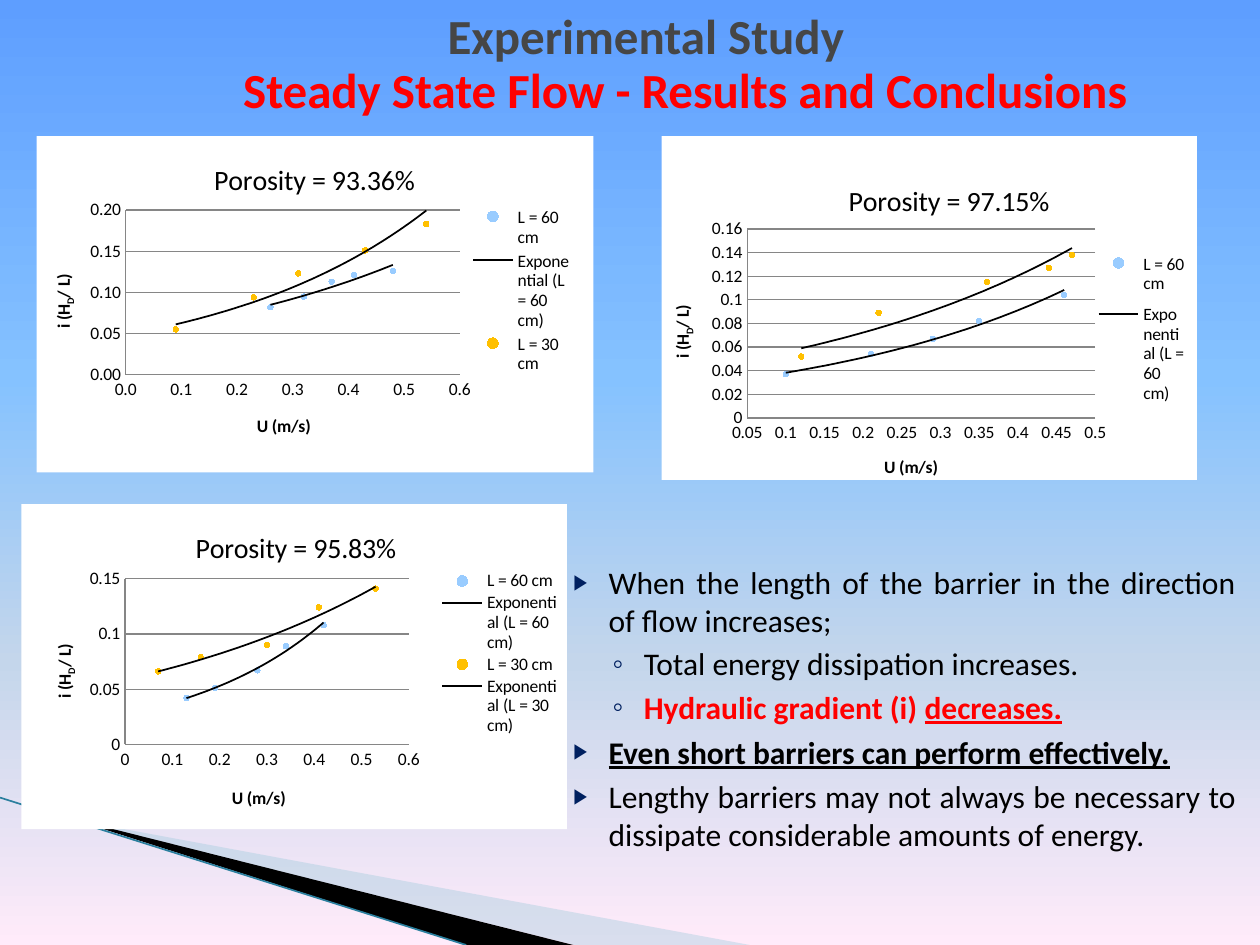
"""Build the slide on steady state flow results and conclusions."""
from dataclasses import dataclass

from pptx import Presentation
from pptx.chart.data import XyChartData
from pptx.dml.color import RGBColor
from pptx.enum.chart import XL_CHART_TYPE as Kind, XL_LEGEND_POSITION as Side
from pptx.enum.chart import XL_MARKER_STYLE as Mark, XL_TICK_MARK as Tick
from pptx.enum.shapes import MSO_CONNECTOR as Conn
from pptx.enum.text import MSO_ANCHOR as Anchor, MSO_AUTO_SIZE as Fit, PP_ALIGN as Align
from pptx.oxml import parse_xml
from pptx.oxml.ns import nsdecls, qn
from pptx.util import Inches, Pt


@dataclass(frozen=True)
class Theme:
    font: str = "Calibri"
    head: int = 28
    body: int = 18
    name: int = 16
    small: int = 10
    black: str = "000000"
    white: str = "FFFFFF"
    red: str = "FF0000"
    gray: str = "464646"
    navy: str = "002060"
    grid: str = "868686"
    band: str = "A0CBDC"
    edge: str = "2A7F9E"
    dots: tuple = ("99CCFF", "FFC000")
    sky: tuple = ((0, "5E9EFF"), (40, "85C2FF"), (70, "C4D6EB"), (100, "FFEBFA"))


T = Theme()

CHARTS = [
    dict(title="Porosity = 93.36%", at=(0.29, 1.08, 4.42, 2.67),
         x=(0, 0.6, 0.1), y=(0, 0.2, 0.05), form=("0.0", "0.00"),
         long=[(0.26, 0.082), (0.32, 0.095), (0.37, 0.113), (0.41, 0.121), (0.48, 0.126)],
         short=[(0.09, 0.055), (0.23, 0.094), (0.31, 0.123), (0.43, 0.151), (0.54, 0.183)],
         plot=(0.16, 0.22, 0.6, 0.49), key=(0.78, 0.2, 0.18, 0.52),
         spots=((0.31, 0.06), (0.39, 0.82), (0.02, 0.4))),
    dict(title="Porosity = 95.83%", at=(0.17, 4, 4.33, 2.58),
         x=(0, 0.6, 0.1), y=(0, 0.15, 0.05), form=("General", "General"),
         long=[(0.13, 0.042), (0.19, 0.051), (0.28, 0.067), (0.34, 0.089), (0.42, 0.108)],
         short=[(0.07, 0.066), (0.16, 0.079), (0.3, 0.09), (0.41, 0.124), (0.53, 0.141)],
         plot=(0.19, 0.23, 0.52, 0.51), key=(0.77, 0.2, 0.22, 0.52),
         spots=((0.31, 0.06), (0.38, 0.86), (0.05, 0.42))),
    dict(title="Porosity = 97.15%", at=(5.25, 1.08, 4.25, 2.75),
         x=(0.05, 0.5, 0.05), y=(0, 0.16, 0.02), form=("General", "General"),
         long=[(0.1, 0.037), (0.21, 0.054), (0.29, 0.067), (0.35, 0.082), (0.46, 0.104)],
         short=[(0.12, 0.052), (0.22, 0.089), (0.36, 0.115), (0.44, 0.127), (0.47, 0.138)],
         plot=(0.16, 0.27, 0.65, 0.55), key=(0.82, 0.31, 0.16, 0.5),
         spots=((0.34, 0.12), (0.41, 0.92), (0.01, 0.48))),
]

POINTS = [
    (0, [("When the length of the barrier in the direction of flow increases;", {})]),
    (1, [("Total energy dissipation increases.", {})]),
    (1, [("Hydraulic gradient (i) ", dict(color=T.red, bold=True)),
         ("decreases.", dict(color=T.red, bold=True, under=True))]),
    (0, [("Even short barriers can perform effectively.", dict(bold=True, under=True))]),
    (0, [("Lengthy barriers may not always be necessary to dissipate "
          "considerable amounts of energy.", {})]),
]
LEVELS = [dict(left=0.4, hang=-0.28, gap=4, char="▶", size=68),
          dict(left=0.68, hang=-0.25, gap=3.2, char="◦", size=100)]

BANDS = [([(0.55, 6.5), (5.95, 7.5), (4.56, 7.5)], T.band, 40),
         ([(0.54, 6.49), (4.55, 7.5), (3.7, 7.5)], T.black, 100)]


def rgb(code):
    return RGBColor.from_string(code)


def put(para, text, size=T.body, color=T.black, bold=False, under=False, base=0):
    run = para.add_run()
    run.text = text
    font = run.font
    font.name, font.size, font.bold, font.underline = T.font, Pt(size), bold, under
    font.color.rgb = rgb(color)
    if base:
        font._element.set("baseline", str(base))


def layout(box, inner=False):
    tags = ["xMode", "yMode"]
    parts = ['<c:layoutTarget val="inner"/>'] if inner else []
    parts += [f'<c:{tag} val="edge"/>' for tag in tags]
    parts += [f'<c:{tag} val="{num}"/>' for tag, num in zip("xywh", box)]
    return parse_xml(f'<c:layout {nsdecls("c")}><c:manualLayout>{"".join(parts)}'
                     '</c:manualLayout></c:layout>')


def place(item, after, box):
    for old in item.findall(qn("c:layout")):
        item.remove(old)
    item.find(qn(after)).addnext(layout(box))


def solid(color):
    return f'<a:solidFill><a:srgbClr val="{color}"/></a:solidFill>'


def paint(slide):
    stops = "".join(f'<a:gs pos="{pos * 1000}"><a:srgbClr val="{code}"/></a:gs>'
                    for pos, code in T.sky)
    slide.background.fill.gradient()
    old = next(slide._element.iter(qn("a:gradFill")))
    old.getparent().replace(old, parse_xml(
        f'<a:gradFill {nsdecls("a")} rotWithShape="1"><a:gsLst>{stops}</a:gsLst>'
        '<a:lin ang="5400000" scaled="0"/></a:gradFill>'))


def draw_bands(shapes):
    for spots, color, alpha in BANDS:
        first, *rest = [(Inches(x), Inches(y)) for x, y in spots]
        path = shapes.build_freeform(*first)
        path.add_line_segments(rest)
        band = path.convert_to_shape()
        band.shadow.inherit = False
        band.fill.solid()
        band.fill.fore_color.rgb = rgb(color)
        band.line.fill.background()
        if alpha < 100:
            tone = band._element.spPr.find(qn("a:solidFill"))[0]
            tone.append(parse_xml(f'<a:alpha {nsdecls("a")} val="{alpha * 1000}"/>'))
    edge = shapes.add_connector(Conn.STRAIGHT, *map(Inches, (0, 6.33, 3.7, 7.5)))
    edge.line.color.rgb = rgb(T.edge)
    edge.line.width = Pt(0.95)
    edge._element.spPr.append(parse_xml(f'<a:effectLst {nsdecls("a")}/>'))


def style_axis(axis, span, form, grid):
    axis.minimum_scale, axis.maximum_scale, axis.major_unit = span
    axis.has_major_gridlines = grid
    axis.major_tick_mark = axis.minor_tick_mark = Tick.NONE
    axis.tick_labels.number_format = form
    axis.tick_labels.number_format_is_linked = False
    lines = [axis.format.line]
    if grid:
        lines.append(axis.major_gridlines.format.line)
    for line in lines:
        line.color.rgb = rgb(T.grid)
        line.width = Pt(0.75)


def draw_chart(shapes, item):
    data = XyChartData()
    for name, pairs in (("L = 60 cm", item["long"]), ("L = 30 cm", item["short"])):
        group = data.add_series(name)
        for x, y in pairs:
            group.add_data_point(x, y)
    chart = shapes.add_chart(Kind.XY_SCATTER, *map(Inches, item["at"]), data).chart
    chart.font.name, chart.font.size = T.font, Pt(T.small)
    chart.font.color.rgb = rgb(T.black)
    chart.plots[0].vary_by_categories = False
    root = chart._chartSpace.chart
    root.addnext(parse_xml(f'<c:spPr {nsdecls("c", "a")}>{solid(T.white)}'
                           '<a:ln><a:noFill/></a:ln></c:spPr>'))

    across, up = chart.category_axis, chart.value_axis
    style_axis(across, item["x"], item["form"][0], False)
    style_axis(up, item["y"], item["form"][1], True)

    chart.has_title = True
    heads = [chart.chart_title, across.axis_title, up.axis_title]
    paras = [head.text_frame.paragraphs[0] for head in heads]
    put(paras[0], item["title"], size=T.name)
    put(paras[1], "U (m/s)", size=T.small, bold=True)
    for text, base in (("i (H", 0), ("D", -25000), ("/ L)", 0)):
        put(paras[2], text, size=T.small, bold=True, base=base)
    turn = next(up.axis_title._element.iter(qn("a:bodyPr")))
    turn.set("rot", "-5400000")
    turn.set("vert", "horz")
    for head, spot in zip(heads, item["spots"]):
        place(head._element, "c:tx", spot)

    chart.has_legend = True
    chart.legend.position = Side.RIGHT
    chart.legend.include_in_layout = False
    place(chart.legend._element, "c:legendPos", item["key"])
    area = root.plotArea
    for old in area.findall(qn("c:layout")):
        area.remove(old)
    area.insert(0, layout(item["plot"], inner=True))

    for group, color in zip(chart.plots[0].series, T.dots):
        group.smooth = False
        group.format.line.fill.background()
        group.marker.style, group.marker.size = Mark.CIRCLE, 3
        group.marker.format.fill.solid()
        group.marker.format.fill.fore_color.rgb = rgb(color)
        group.marker.format.line.color.rgb = rgb(color)
        group._element.find(qn("c:xVal")).addprevious(parse_xml(
            f'<c:trendline {nsdecls("c", "a")}><c:spPr><a:ln w="12700">{solid(T.black)}'
            '</a:ln></c:spPr><c:trendlineType val="exp"/><c:dispRSqr val="0"/>'
            '<c:dispEq val="0"/></c:trendline>'))


def set_box(shape, at, anchor):
    shape.left, shape.top, shape.width, shape.height = map(Inches, at)
    frame = shape.text_frame
    frame.word_wrap, frame.auto_size = True, Fit.NONE
    frame.vertical_anchor = anchor
    return frame


def fill_body(shape):
    frame = set_box(shape, (4.33, 4.42, 5.58, 2.5), Anchor.TOP)
    for num, (level, runs) in enumerate(POINTS):
        para = frame.add_paragraph() if num else frame.paragraphs[0]
        rule = LEVELS[level]
        props = para._p.get_or_add_pPr()
        props.set("marL", str(Inches(rule["left"])))
        props.set("indent", str(Inches(rule["hang"])))
        for xml in (f'<a:buClr {nsdecls("a")}><a:srgbClr val="{T.navy}"/></a:buClr>',
                    f'<a:buSzPct {nsdecls("a")} val="{rule["size"] * 1000}"/>',
                    f'<a:buChar {nsdecls("a")} char="{rule["char"]}"/>'):
            props.append(parse_xml(xml))
        para.level, para.alignment = level, Align.JUSTIFY
        para.space_before = Pt(rule["gap"] if num else 0)
        for text, form in runs:
            put(para, text, **form)


def main():
    deck = Presentation()
    deck.slide_width, deck.slide_height = Inches(10), Inches(7.5)
    slide = deck.slides.add_slide(deck.slide_layouts[1])
    shapes = slide.shapes
    title, body = shapes.title, slide.placeholders[1]
    paint(slide)
    draw_bands(shapes)
    for item in CHARTS:
        draw_chart(shapes, item)

    shapes._spTree.append(body._element)
    fill_body(body)
    top = shapes.add_textbox(0, 0, 0, 0)
    para = set_box(top, (0.29, -0.33, 9.67, 1.21), Anchor.MIDDLE).paragraphs[0]
    para.alignment = Align.CENTER
    put(para, "Experimental Study", size=T.head, color=T.gray, bold=True)
    shapes._spTree.append(title._element)
    para = set_box(title, (1.83, 0.08, 9.87, 1.25), Anchor.MIDDLE).paragraphs[0]
    para.alignment = Align.LEFT
    put(para, "Steady State Flow - Results and Conclusions",
        size=T.head, color=T.red, bold=True)
    deck.save("out.pptx")


if __name__ == "__main__":
    main()
